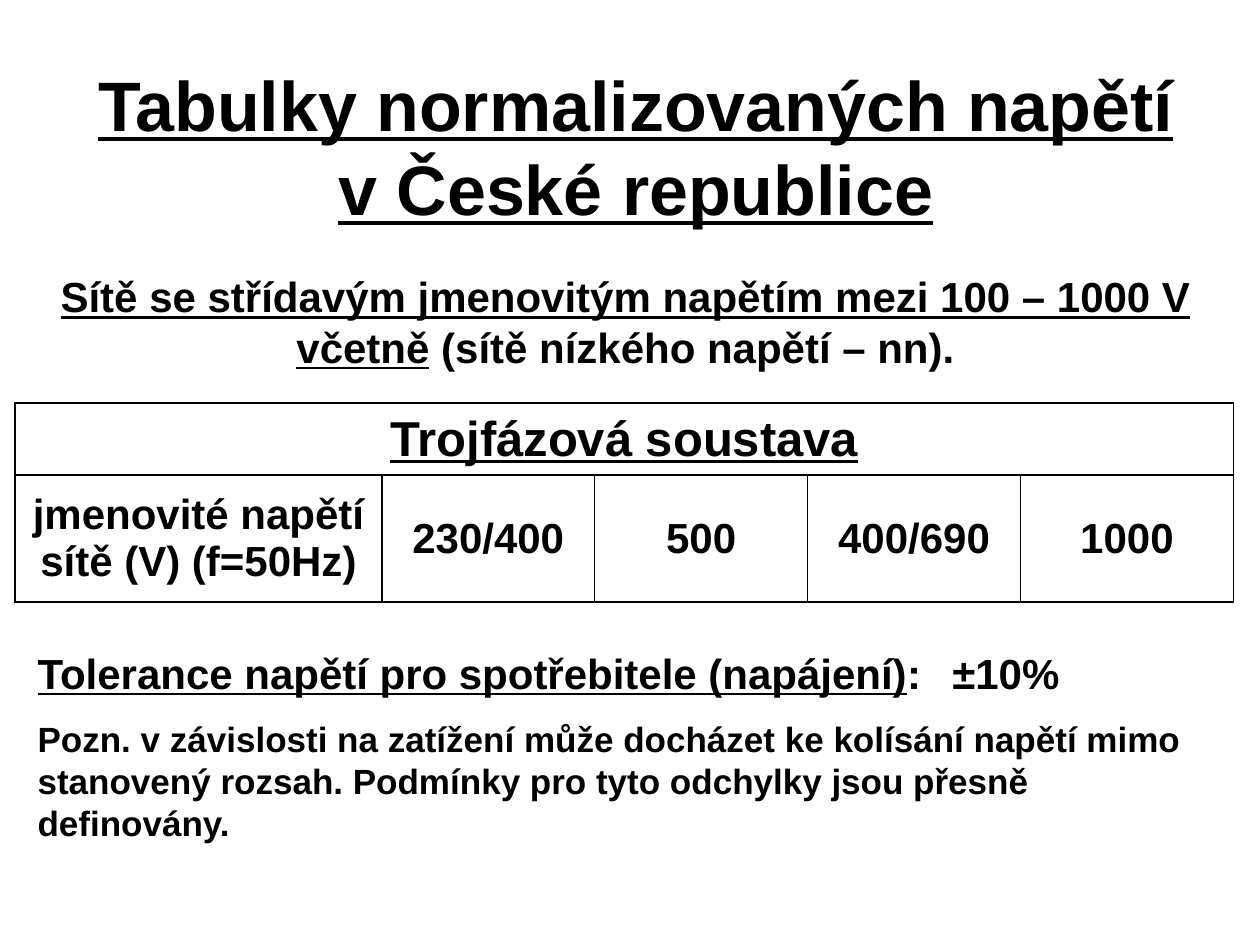
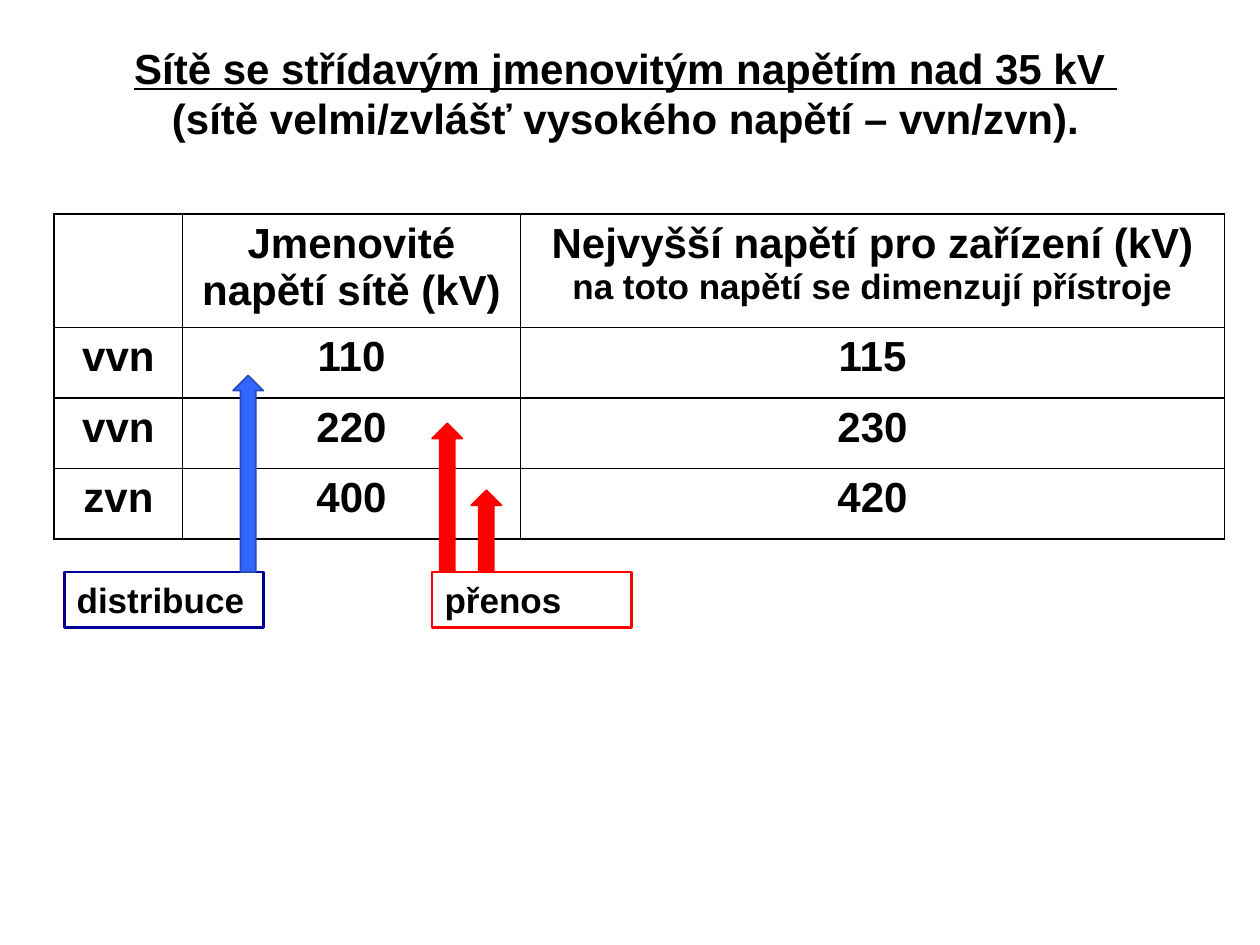
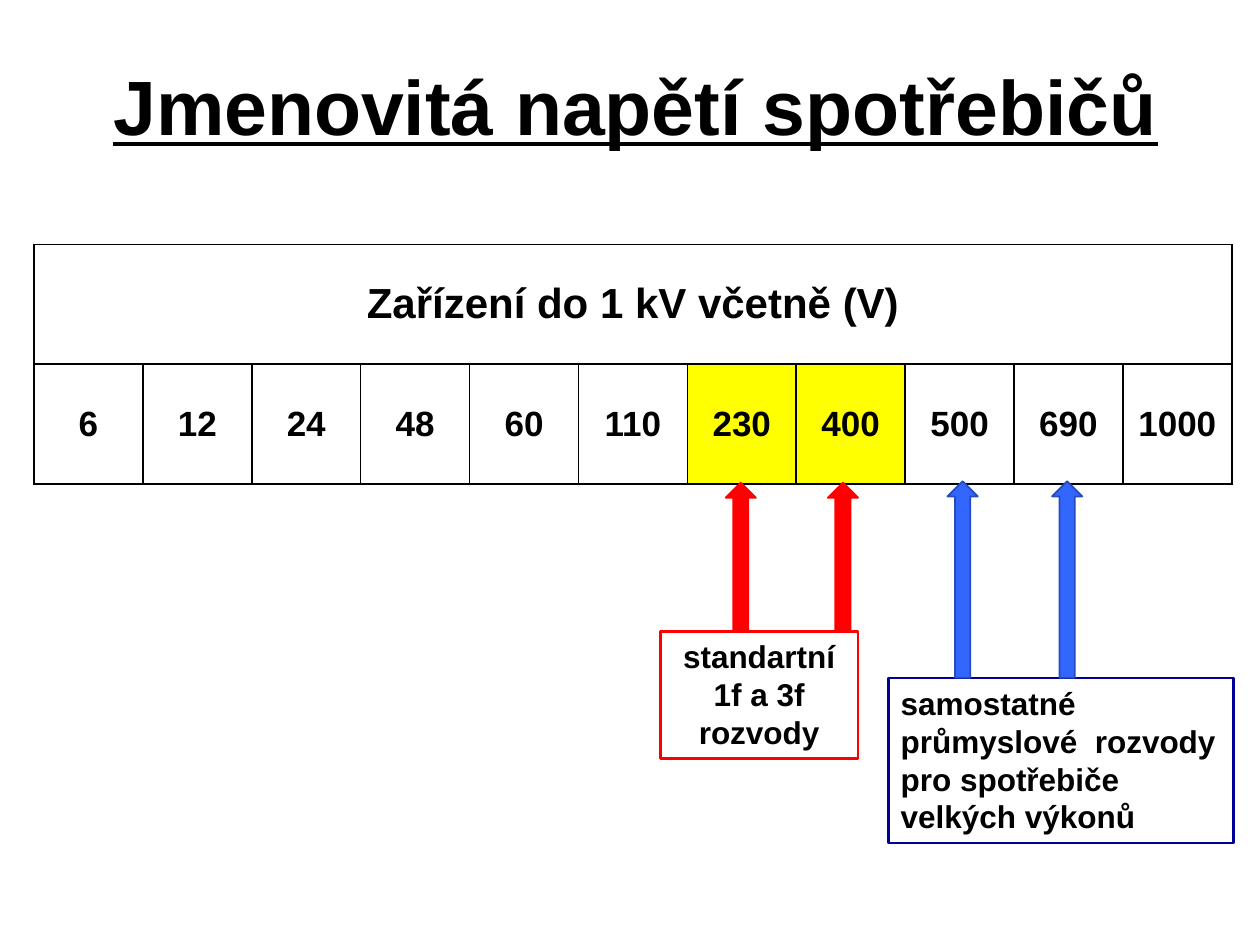
from lxml import etree
from pptx import Presentation
from pptx.dml.color import RGBColor
from pptx.enum.shapes import MSO_SHAPE
from pptx.enum.text import MSO_ANCHOR, PP_ALIGN
from pptx.oxml.ns import qn
from pptx.util import Inches, Pt

LEFT, CENTER = PP_ALIGN.LEFT, PP_ALIGN.CENTER
TOP, MIDDLE = MSO_ANCHOR.TOP, MSO_ANCHOR.MIDDLE
RECTANGLE, UP_ARROW = MSO_SHAPE.RECTANGLE, MSO_SHAPE.UP_ARROW

BLACK = RGBColor(0x00, 0x00, 0x00)
RED = RGBColor(0xFF, 0x00, 0x00)
BLUE = RGBColor(0x33, 0x66, 0xFF)
BLUE_EDGE = RGBColor(0x26, 0x4B, 0xBD)
NAVY = RGBColor(0x00, 0x00, 0x99)
YELLOW = RGBColor(0xFF, 0xFF, 0x00)

FONT = "Arial"
TITLE_ONLY_LAYOUT = 5
ARROW_WIDTH = 0.24
BLUE_ARROW_HEIGHT = 1.56
RED_ARROW_HEIGHT = 1.18


def style_paragraph(paragraph, size, align=LEFT, underline=None):
    paragraph.alignment = align
    font = paragraph.font
    font.name, font.size, font.bold = FONT, Pt(size), True
    font.color.rgb = BLACK
    font.underline = underline


def add_run(paragraph, text, underline=None, size=None):
    run = paragraph.add_run()
    run.text = text
    if underline is not None:
        run.font.underline = underline
    if size:
        run.font.size = Pt(size)


def add_tab_stop(paragraph, position):
    tab_list = etree.SubElement(paragraph._p.get_or_add_pPr(), qn("a:tabLst"))
    etree.SubElement(tab_list, qn("a:tab"), pos=str(Inches(position)), algn="l")


def place_title(slide, left, top, width, height):
    title = slide.shapes.title
    title.left, title.top = Inches(left), Inches(top)
    title.width, title.height = Inches(width), Inches(height)
    title.text_frame.vertical_anchor = MIDDLE
    return title.text_frame


def add_main_title(slide, text, top, height, size):
    frame = place_title(slide, 0.59, top, 8.91, height)
    frame.text = text
    style_paragraph(frame.paragraphs[0], size, CENTER, underline=True)


def add_text_frame(slide, top, height):
    """Add a text box across the slide and return its text frame."""
    box = slide.shapes.add_textbox(Inches(0.2), Inches(top), Inches(9.53), Inches(height))
    box.text_frame.word_wrap = True
    return box.text_frame


def set_borders(cell):
    properties = cell._tc.get_or_add_tcPr()
    for position, side in enumerate(("a:lnL", "a:lnR", "a:lnT", "a:lnB")):
        line = etree.Element(qn(side), w=str(Pt(1)))
        fill = etree.SubElement(line, qn("a:solidFill"))
        etree.SubElement(fill, qn("a:srgbClr"), val=str(BLACK))
        properties.insert(position, line)


def write_cell(cell, text, size, underline=None):
    cell.text = text
    style_paragraph(cell.text_frame.paragraphs[0], size, CENTER, underline)


def add_grid(slide, left, top, column_widths, row_heights, anchor):
    """Add an unfilled table with black rules."""
    table = slide.shapes.add_table(
        len(row_heights), len(column_widths), Inches(left), Inches(top),
        Inches(sum(column_widths)), Inches(sum(row_heights))).table
    table.first_row = table.horz_banding = False
    for column, width in zip(table.columns, column_widths):
        column.width = Inches(width)
    for row, height in zip(table.rows, row_heights):
        row.height = Inches(height)
    for cell in table.iter_cells():
        cell.fill.background()
        cell.vertical_anchor = anchor
        set_borders(cell)
    return table


def write_banner(table, text, size, underline=None):
    """Merge the first row and write its heading."""
    table.cell(0, 0).merge(table.cell(0, len(table.columns) - 1))
    write_cell(table.cell(0, 0), text, size, underline)


def add_label(slide, text, left, top, width, height, edge, size, align=LEFT):
    label = slide.shapes.add_shape(
        RECTANGLE, Inches(left), Inches(top), Inches(width), Inches(height))
    label.shadow.inherit = False
    label.fill.background()
    label.line.color.rgb, label.line.width = edge, Pt(1.5)
    frame = label.text_frame
    frame.word_wrap, frame.vertical_anchor = True, TOP
    frame.text = text
    style_paragraph(frame.paragraphs[0], size, align)


def add_up_arrow(slide, left, bottom, height, fill, edge):
    arrow = slide.shapes.add_shape(
        UP_ARROW, Inches(left), Inches(bottom - height), Inches(ARROW_WIDTH), Inches(height))
    arrow.shadow.inherit = False
    arrow.fill.solid()
    arrow.fill.fore_color.rgb = fill
    arrow.line.color.rgb, arrow.line.width = edge, Pt(1)


def add_blue_arrow(slide, left, bottom):
    add_up_arrow(slide, left, bottom, BLUE_ARROW_HEIGHT, BLUE, BLUE_EDGE)


def add_red_arrow(slide, left, bottom, height=RED_ARROW_HEIGHT):
    add_up_arrow(slide, left, bottom, height, RED, RED)


def build_low_voltage(slide):
    add_main_title(slide, "Tabulky normalizovaných napětí v České republice", 0.3, 1.71, 40)

    network = add_text_frame(slide, 2.1, 0.91).paragraphs[0]
    style_paragraph(network, 24, CENTER)
    add_run(network, "Sítě se střídavým jmenovitým napětím mezi 100 – 1000 V včetně", True)
    add_run(network, " (sítě nízkého napětí – nn).")

    voltages = add_grid(slide, 0.12, 3.2, [2.91] + [1.69] * 4, [0.57, 1.01], MIDDLE)
    write_banner(voltages, "Trojfázová soustava", 28, underline=True)
    values = ("jmenovité napětí sítě (V) (f=50Hz)", "230/400", "500", "400/690", "1000")
    for column, value in enumerate(values):
        write_cell(voltages.cell(1, column), value, 24)

    notes = add_text_frame(slide, 5.09, 1.68)
    tolerance = notes.paragraphs[0]
    add_tab_stop(tolerance, 7.26)
    style_paragraph(tolerance, 24)
    add_run(tolerance, "Tolerance napětí pro spotřebitele (napájení)", True)
    add_run(tolerance, ": \t±10%")
    remark = notes.add_paragraph()
    remark.text = ("Pozn. v závislosti na zatížení může docházet ke kolísání napětí mimo "
                   "stanovený rozsah. Podmínky pro tyto odchylky jsou přesně definovány.")
    remark.space_before = Pt(11)
    style_paragraph(remark, 20)


def build_high_voltage(slide):
    heading = place_title(slide, 0.2, 0.28, 9.53, 0.91)
    network = heading.paragraphs[0]
    network.text = "Sítě se střídavým jmenovitým napětím nad 35 kV "
    style_paragraph(network, 24, CENTER, underline=True)
    network_class = heading.add_paragraph()
    network_class.text = "(sítě velmi/zvlášť vysokého napětí – vvn/zvn)."
    style_paragraph(network_class, 24, CENTER)

    voltages = add_grid(slide, 0.43, 1.7, [1.02, 2.68, 5.59], [0.9] + [0.56] * 3, TOP)
    write_cell(voltages.cell(0, 1), "Jmenovité napětí sítě (kV)", 24)
    maximum = voltages.cell(0, 2).text_frame.paragraphs[0]
    style_paragraph(maximum, 24, CENTER)
    add_run(maximum, "Nejvyšší napětí pro zařízení (kV) ")
    add_run(maximum, "na toto napětí se dimenzují přístroje", size=20)
    levels = (("vvn", "110", "115"), ("vvn", "220", "230"), ("zvn", "400", "420"))
    for row, level in enumerate(levels, start=1):
        for column, value in enumerate(level):
            write_cell(voltages.cell(row, column), value, 24)

    label_top = 4.54
    add_label(slide, "distribuce", 0.51, label_top, 1.58, 0.44, NAVY, 20)
    add_label(slide, "přenos", 3.43, label_top, 1.58, 0.44, RED, 20)
    add_blue_arrow(slide, 1.85, label_top)
    add_red_arrow(slide, 3.43, label_top)
    add_red_arrow(slide, 3.74, label_top, height=0.65)


def build_appliances(slide):
    add_main_title(slide, "Jmenovitá napětí spotřebičů", 0.28, 1.1, 44)

    voltages = (6, 12, 24, 48, 60, 110, 230, 400, 500, 690, 1000)
    standard_voltages = (230, 400)
    table_width = 9.51
    table = add_grid(slide, 0.27, 1.94, [table_width / len(voltages)] * len(voltages),
                     [0.95] * 2, MIDDLE)
    write_banner(table, "Zařízení do 1 kV včetně (V)", 24)
    for column, voltage in enumerate(voltages):
        cell = table.cell(1, column)
        write_cell(cell, str(voltage), 20)
        if voltage in standard_voltages:
            cell.fill.solid()
            cell.fill.fore_color.rgb = YELLOW

    industrial_top, standard_top = 5.38, 5.01
    add_label(slide, "samostatné průmyslové  rozvody pro spotřebiče velkých výkonů",
              7.05, industrial_top, 2.74, 1.31, NAVY, 18)
    add_label(slide, "standartní 1f a 3f rozvody",
              5.24, standard_top, 1.57, 1.01, RED, 18, CENTER)
    for left in (7.52, 8.35):
        add_blue_arrow(slide, left, industrial_top)
    for left in (5.76, 6.57):
        add_red_arrow(slide, left, standard_top)


def main():
    presentation = Presentation()
    presentation.slide_width, presentation.slide_height = Inches(10), Inches(7.5)
    layout = presentation.slide_layouts[TITLE_ONLY_LAYOUT]
    for build in (build_low_voltage, build_high_voltage, build_appliances):
        build(presentation.slides.add_slide(layout))
    presentation.save("out.pptx")


if __name__ == "__main__":
    main()
